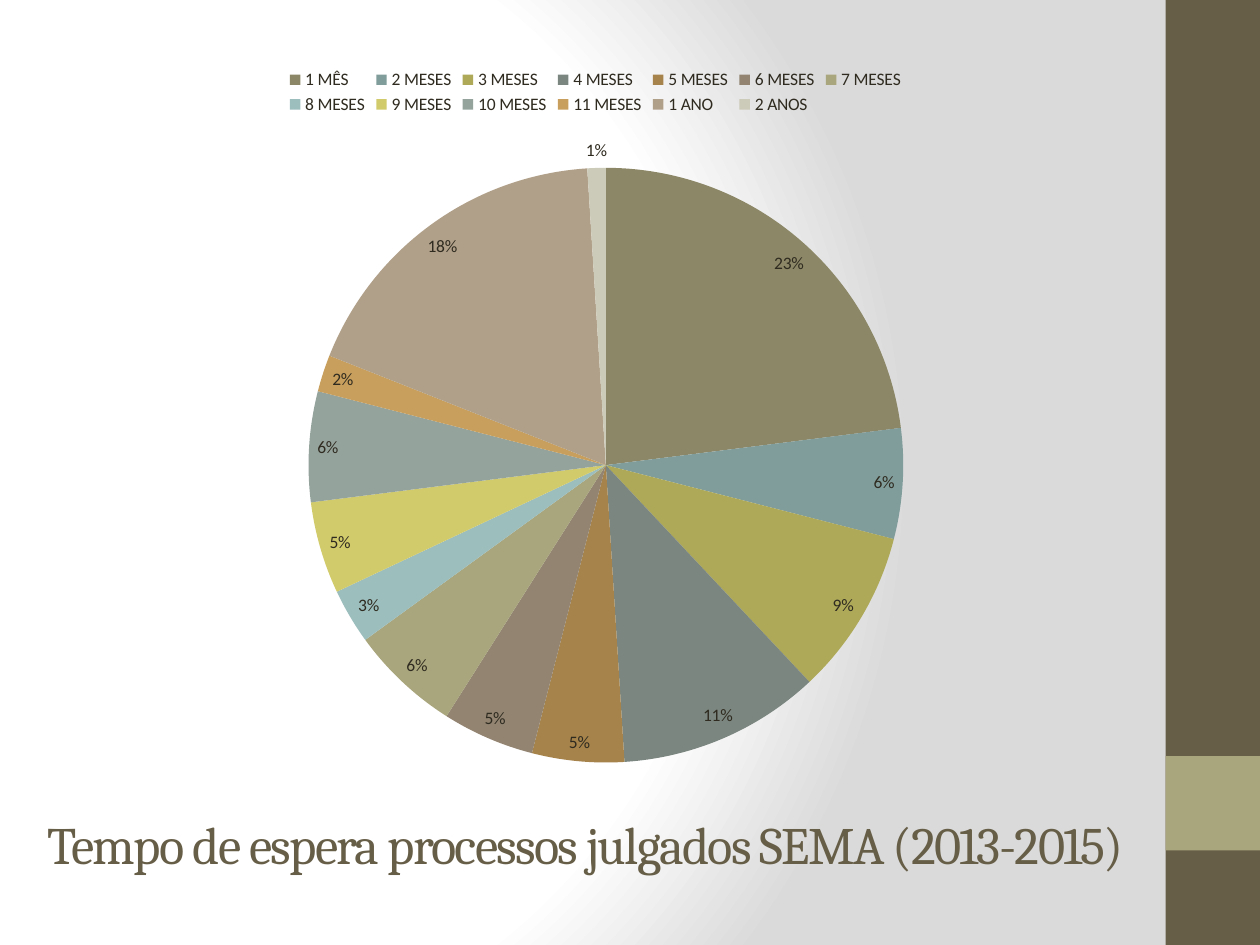
from dataclasses import dataclass

from lxml import etree
from pptx import Presentation, util as u
from pptx.chart.data import CategoryChartData
from pptx.dml.color import RGBColor
from pptx.enum import chart as ch, shapes, text
from pptx.oxml import parse_xml
from pptx.oxml.ns import nsdecls, qn

WIDTH, HEIGHT = u.Inches(10), u.Inches(7.5)


@dataclass(frozen=True)
class Theme:
    title_font: str = "Cambria"
    chart_font: str = "Calibri"
    title_size: float = 30
    chart_size: float = 10
    brown: str = "675E47"
    olive: str = "A9A57C"
    ink: str = "2F2B20"
    white: str = "FFFFFF"
    grey: str = "DADADA"


@dataclass(frozen=True)
class Box:
    """A rectangle in shares of the slide's width and height."""
    left: float
    top: float
    width: float
    height: float

    def emu(self) -> tuple[int, int, int, int]:
        return (int(self.left * WIDTH), int(self.top * HEIGHT),
                int(self.width * WIDTH), int(self.height * HEIGHT))


@dataclass(frozen=True)
class Band:
    box: Box
    color: str


@dataclass(frozen=True)
class Wait:
    label: str
    percent: int
    color: str


THEME = Theme()
BANDS = [
    Band(Box(0.925, 0, 0.075, 1), THEME.brown),
    Band(Box(0.925, 0.8, 0.075, 0.1), THEME.olive),
]
TITLE_BOX = Box(0.02, 0.802, 0.89, 0.181)
CHART_BOX = Box(0.051, 0.059, 0.843, 0.767)
PIE_LAYOUT = {"x": 0.23, "y": 0.15, "w": 0.56, "h": 0.83}
WAITS = [
    Wait("1 MÊS", 23, "8C8766"),
    Wait("2 MESES", 6, "819D9B"),
    Wait("3 MESES", 9, "AEA959"),
    Wait("4 MESES", 11, "7B8680"),
    Wait("5 MESES", 5, "A5834B"),
    Wait("6 MESES", 5, "928471"),
    Wait("7 MESES", 6, "A9A57C"),
    Wait("8 MESES", 3, "9CBEBD"),
    Wait("9 MESES", 5, "D2CB6C"),
    Wait("10 MESES", 6, "95A39D"),
    Wait("11 MESES", 2, "C89F5D"),
    Wait("1 ANO", 18, "B1A089"),
    Wait("2 ANOS", 1, "CCCAB8"),
]


def style_font(font, name: str, size: float, color: str) -> None:
    font.name, font.size = name, u.Pt(size)
    font.color.rgb = RGBColor.from_string(color)


def paint_background(slide) -> None:
    """Radial gradient, white on the left and grey on the right."""
    slide.background.fill.solid()
    solid = slide._element.find(".//" + qn("p:bgPr")).find(qn("a:solidFill"))
    stops = "".join(
        f'<a:gs pos="{share * 1000}"><a:srgbClr val="{color}"/></a:gs>'
        for share, color in ((0, THEME.white), (75, THEME.white), (100, THEME.grey)))
    solid.getparent().replace(solid, parse_xml(
        f'<a:gradFill {nsdecls("a")} rotWithShape="1"><a:gsLst>{stops}</a:gsLst>'
        '<a:path path="circle"><a:fillToRect l="20000" t="50000" r="100000" '
        'b="50000"/></a:path></a:gradFill>'))


def draw_band(slide, band: Band) -> None:
    bar = slide.shapes.add_shape(shapes.MSO_SHAPE.RECTANGLE, *band.box.emu())
    bar.shadow.inherit = False
    bar.fill.solid()
    bar.fill.fore_color.rgb = RGBColor.from_string(band.color)
    bar.line.fill.background()


def write_title(slide, wording: str) -> None:
    title = slide.shapes.title
    title.left, title.top, title.width, title.height = TITLE_BOX.emu()
    frame = title.text_frame
    frame.text = wording
    frame.word_wrap = True
    frame.auto_size = text.MSO_AUTO_SIZE.NONE
    frame.vertical_anchor = text.MSO_ANCHOR.MIDDLE
    line = frame.paragraphs[0]
    line.alignment = text.PP_ALIGN.CENTER
    style_font(line.font, THEME.title_font, THEME.title_size, THEME.brown)
    line.runs[0].font._element.set("spc", "-100")


def fix_pie_area(chart) -> None:
    """Place the pie at fixed shares of the chart area."""
    plot_area = chart._chartSpace.find(".//" + qn("c:plotArea"))
    for old in plot_area.findall(qn("c:layout")):
        plot_area.remove(old)
    layout = etree.Element(qn("c:layout"))
    manual = etree.SubElement(layout, qn("c:manualLayout"))
    settings = {"layoutTarget": "inner", "xMode": "edge", "yMode": "edge", **PIE_LAYOUT}
    for tag, value in settings.items():
        etree.SubElement(manual, qn(f"c:{tag}")).set("val", str(value))
    plot_area.insert(0, layout)


def draw_pie(slide, waits: list[Wait]) -> None:
    data = CategoryChartData()
    data.categories = [wait.label for wait in waits]
    data.add_series("Series 1", [wait.percent for wait in waits])
    chart = slide.shapes.add_chart(
        ch.XL_CHART_TYPE.PIE, *CHART_BOX.emu(), data).chart
    style_font(chart.font, THEME.chart_font, THEME.chart_size, THEME.ink)
    chart.has_title = False
    chart.has_legend = True
    chart.legend.position = ch.XL_LEGEND_POSITION.TOP
    chart.legend.include_in_layout = False

    plot = chart.plots[0]
    plot.vary_by_categories = True
    for index, wait in enumerate(waits):
        wedge = plot.series[0].points[index].format
        wedge.fill.solid()
        wedge.fill.fore_color.rgb = RGBColor.from_string(wait.color)
        wedge.line.fill.background()

    labels = plot.series[0].data_labels
    labels.show_value = False
    labels.show_percentage = True
    labels.number_format, labels.number_format_is_linked = "0%", False
    labels.position = ch.XL_LABEL_POSITION.BEST_FIT
    fix_pie_area(chart)


def main() -> None:
    deck = Presentation()
    deck.slide_width, deck.slide_height = WIDTH, HEIGHT
    slide = deck.slides.add_slide(deck.slide_layouts.get_by_name("Title Only"))
    paint_background(slide)
    for band in BANDS:
        draw_band(slide, band)
    write_title(slide, "Tempo de espera processos julgados SEMA (2013-2015)")
    draw_pie(slide, WAITS)
    deck.save("out.pptx")


if __name__ == "__main__":
    main()
